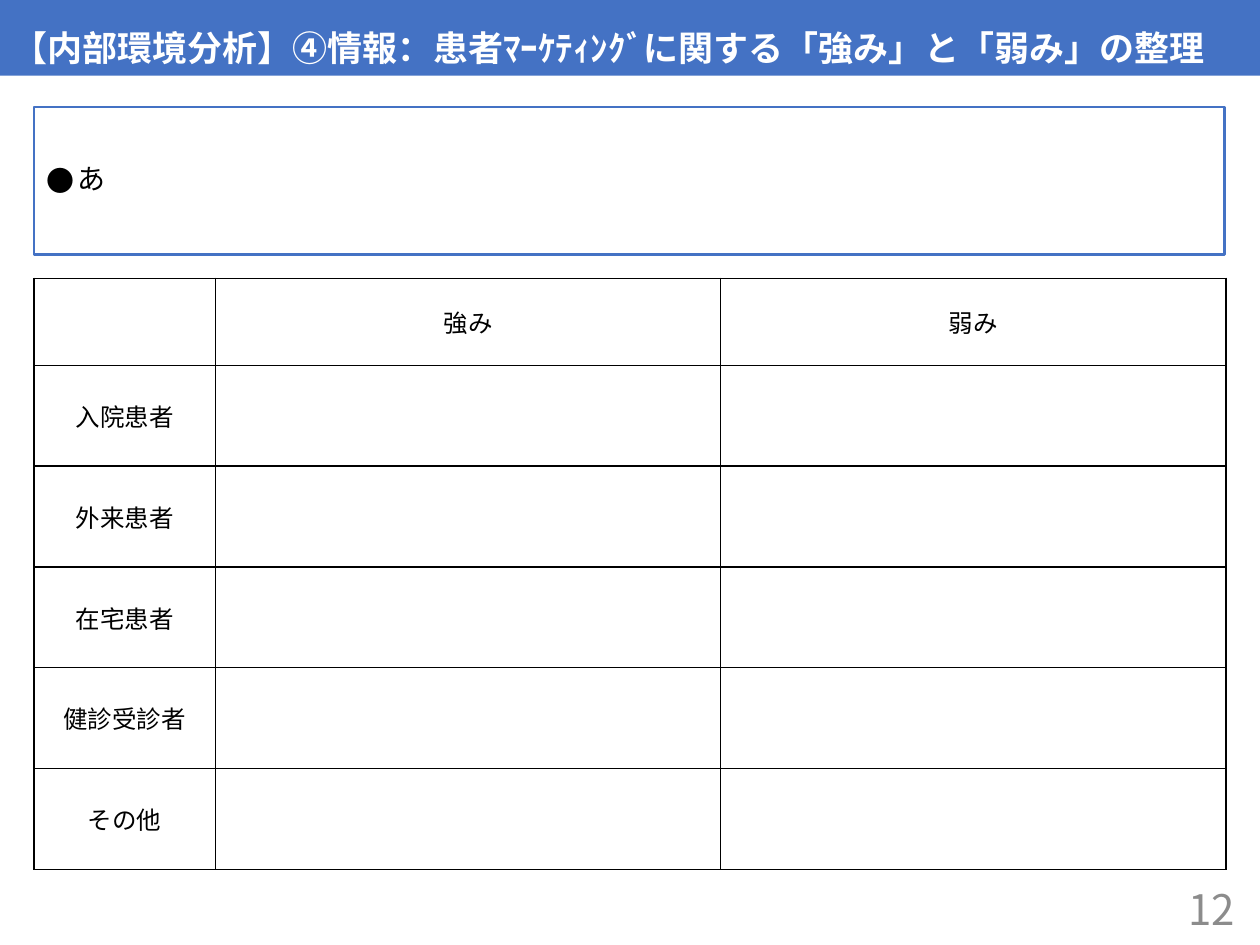
from dataclasses import dataclass
from typing import Optional

from lxml.etree import SubElement
from pptx import Presentation
from pptx.dml.color import RGBColor
from pptx.enum.shapes import MSO_SHAPE
from pptx.enum.text import MSO_ANCHOR, PP_ALIGN
from pptx.oxml.ns import qn
from pptx.util import Inches, Pt

FONT = "Noto Sans CJK JP"
BLUE = RGBColor(0x44, 0x72, 0xC4)
WHITE = RGBColor(0xFF, 0xFF, 0xFF)
BLACK = RGBColor(0x00, 0x00, 0x00)
GRAY = RGBColor(0x8C, 0x8C, 0x8C)

LEFT, WIDTH = 0.27, 9.45
COL_WIDTHS = (1.44, 4.01, 4.01)
HEADER_HEIGHT, ROW_HEIGHT = 0.69, 0.8
HEADERS = ("", "強み", "弱み")
PATIENT_GROUPS = ("入院患者", "外来患者", "在宅患者", "健診受診者", "その他")


@dataclass(frozen=True)
class TextStyle:
    size: int
    color: RGBColor = BLACK
    bold: bool = False
    align: PP_ALIGN = PP_ALIGN.LEFT


@dataclass(frozen=True)
class Box:
    left: float
    top: float
    width: float
    height: float
    fill: RGBColor
    line: Optional[RGBColor] = None


TITLE = TextStyle(20, WHITE, bold=True)
SUMMARY = TextStyle(16)
CELL = TextStyle(14, align=PP_ALIGN.CENTER)
PAGE_NUMBER = TextStyle(24, GRAY, align=PP_ALIGN.RIGHT)


def write(tf, text: str, style: TextStyle):
    p = tf.paragraphs[0]
    p.alignment = style.align
    r = p.add_run()
    r.text = text
    r.font.name = FONT
    r.font.size = Pt(style.size)
    r.font.bold = style.bold
    r.font.color.rgb = style.color
    SubElement(r.font._element, qn("a:ea"), typeface=FONT)
    return p


def add_box(s, box: Box):
    sp = s.shapes.add_shape(
        MSO_SHAPE.RECTANGLE,
        Inches(box.left), Inches(box.top), Inches(box.width), Inches(box.height),
    )
    sp.shadow.inherit = False
    sp.fill.solid()
    sp.fill.fore_color.rgb = box.fill
    if box.line is None:
        sp.line.fill.background()
    else:
        sp.line.color.rgb = box.line
        sp.line.width = Pt(1.5)
    sp.text_frame.word_wrap = True
    return sp


def add_bullet(p, char: str, indent: float) -> None:
    pPr = p._p.get_or_add_pPr()
    pPr.set("marL", str(Inches(indent)))
    pPr.set("indent", str(-Inches(indent)))
    SubElement(pPr, qn("a:buFont"), typeface=FONT)
    SubElement(pPr, qn("a:buChar"), char=char)


def add_borders(cell, color: RGBColor, width: float) -> None:
    tcPr = cell._tc.get_or_add_tcPr()
    for side in ("lnL", "lnR", "lnT", "lnB"):
        ln = SubElement(tcPr, qn(f"a:{side}"), w=str(Pt(width)))
        fill = SubElement(ln, qn("a:solidFill"))
        SubElement(fill, qn("a:srgbClr"), val=str(color))


def add_title(s) -> None:
    tf = add_box(s, Box(0, 0, 10, 0.6, BLUE)).text_frame
    tf.vertical_anchor = MSO_ANCHOR.BOTTOM
    p = write(tf, "【内部環境分析】④情報：患者ﾏｰｹﾃｨﾝｸﾞに関する「強み」と「弱み」の整理", TITLE)
    p.line_spacing = 0.9


def add_summary(s) -> None:
    tf = add_box(s, Box(LEFT, 0.85, WIDTH, 1.17, WHITE, BLUE)).text_frame
    tf.vertical_anchor = MSO_ANCHOR.MIDDLE
    p = write(tf, "あ", SUMMARY)
    p.line_spacing = 0.9
    p.space_before = Pt(10)
    add_bullet(p, "●", 0.25)


def add_strengths_table(s) -> None:
    rows = [HEADERS] + [(group, "", "") for group in PATIENT_GROUPS]
    heights = [HEADER_HEIGHT] + [ROW_HEIGHT] * len(PATIENT_GROUPS)
    table = s.shapes.add_table(
        len(rows), len(COL_WIDTHS),
        Inches(LEFT), Inches(2.21), Inches(WIDTH), Inches(sum(heights)),
    ).table
    table.first_row = False
    table.horz_banding = False
    for column, width in zip(table.columns, COL_WIDTHS):
        column.width = Inches(width)
    for row, height, texts in zip(table.rows, heights, rows):
        row.height = Inches(height)
        for cell, text in zip(row.cells, texts):
            cell.vertical_anchor = MSO_ANCHOR.MIDDLE
            add_borders(cell, BLACK, 1)
            cell.fill.solid()
            cell.fill.fore_color.rgb = WHITE
            if text:
                write(cell.text_frame, text, CELL)


def add_page_number(s) -> None:
    sp = s.shapes.add_textbox(Inches(7.65), Inches(7.01), Inches(2.25), Inches(0.4))
    tf = sp.text_frame
    tf.word_wrap = True
    tf.vertical_anchor = MSO_ANCHOR.MIDDLE
    write(tf, "12", PAGE_NUMBER)


def main() -> None:
    prs = Presentation()
    prs.slide_width = Inches(10)
    prs.slide_height = Inches(7.5)
    s = prs.slides.add_slide(prs.slide_layouts[6])
    add_title(s)
    add_page_number(s)
    add_summary(s)
    add_strengths_table(s)
    prs.save("out.pptx")


if __name__ == "__main__":
    main()
